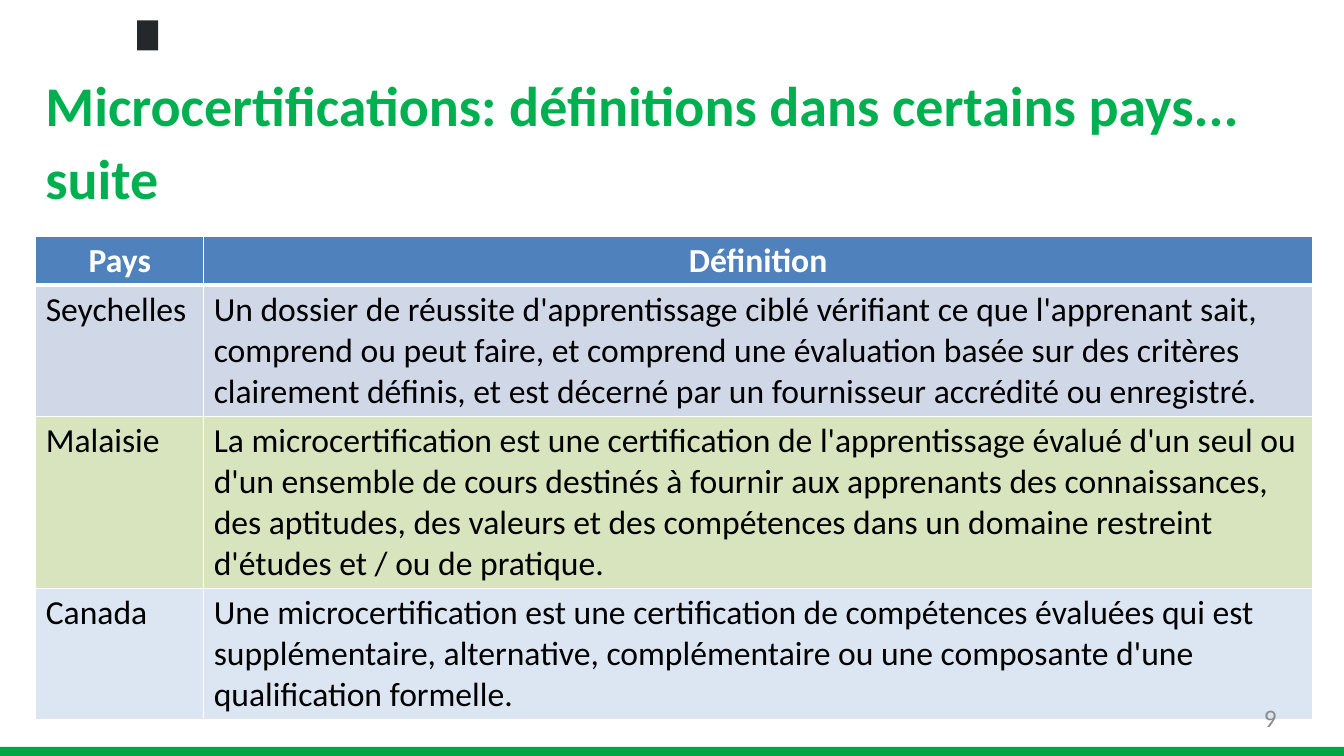
from lxml import etree
from pptx import Presentation
from pptx import util as u
from pptx.dml.color import RGBColor
from pptx.enum import shapes, text
from pptx.oxml.ns import qn

Pt = u.Pt

# Content
TITLE = "Microcertifications: définitions dans certains pays... suite"
PAGE = "9"
# Each row: country, definition, fill, number of text lines
ROWS = [
    ("Pays", "Définition", "header", 1),
    ("Seychelles",
     "Un dossier de réussite d'apprentissage ciblé vérifiant ce que l'apprenant sait, "
     "comprend ou peut faire, et comprend une évaluation basée sur des critères "
     "clairement définis, et est décerné par un fournisseur accrédité ou enregistré.",
     "lavender", 3),
    ("Malaisie",
     "La microcertification est une certification de l'apprentissage évalué d'un seul ou "
     "d'un ensemble de cours destinés à fournir aux apprenants des connaissances, "
     "des aptitudes, des valeurs et des compétences dans un domaine restreint "
     "d'études et / ou de pratique.",
     "olive", 4),
    ("Canada",
     "Une microcertification est une certification de compétences évaluées qui est "
     "supplémentaire, alternative, complémentaire ou une composante d'une "
     "qualification formelle.",
     "sky", 3),
]
COLORS = {
    "white": "FFFFFF", "black": "000000", "mark": "24282A", "band": "00A643",
    "title": "00B050", "page": "8C8C8C", "header": "4F81BD",
    "lavender": "D0D8E8", "olive": "D7E4BD", "sky": "DCE6F2",
}
FONT = "Calibri"
W, H = 960, 540
COLS = (120, 792)
LINE, PAD = 29.3, 2.88  # table line pitch and cell padding


def rgb(name):
    return RGBColor.from_string(COLORS[name])


def add_run(p, words, size, color, bold=False):
    r = p.add_run()
    r.text = words
    r.font.name, r.font.size, r.font.bold = FONT, Pt(size), bold
    r.font.color.rgb = rgb(color)


def add_rect(s, x, y, w, h, color):
    sp = s.shapes.add_shape(shapes.MSO_SHAPE.RECTANGLE, Pt(x), Pt(y), Pt(w), Pt(h))
    sp.shadow.inherit = False
    sp.fill.solid()
    sp.fill.fore_color.rgb = rgb(color)
    sp.line.fill.background()
    return sp


def set_frame(sp, left=0):
    tf = sp.text_frame
    tf.word_wrap = True
    tf.vertical_anchor = text.MSO_ANCHOR.TOP
    tf.margin_left = Pt(left)
    tf.margin_top = tf.margin_right = tf.margin_bottom = 0
    return tf.paragraphs[0]


def set_borders(cell, widths):
    tcPr = cell._tc.get_or_add_tcPr()
    for i, (side, width) in enumerate(widths.items()):
        ln = etree.Element(qn("a:" + side), w=str(Pt(width)))
        fill = etree.SubElement(ln, qn("a:solidFill"))
        etree.SubElement(fill, qn("a:srgbClr"), val=COLORS["white"])
        tcPr.insert(i, ln)


prs = Presentation()
prs.slide_width, prs.slide_height = Pt(W), Pt(H)
s = prs.slides.add_slide(prs.slide_layouts[6])

# Corner mark and bottom band
add_rect(s, 98, 14.5, 15, 21.5, "mark")
add_rect(s, 0, 533.5, W, 6.5, "band")

# Title
p = set_frame(add_rect(s, 26, 47, 928, 105, "white"), left=6.5)
p.alignment = text.PP_ALIGN.LEFT
p.line_spacing = Pt(51.6)
add_run(p, TITLE, 40, "title", True)

# Table of definitions
heights = [n * LINE + 2 * PAD for *_, n in ROWS]
tbl = s.shapes.add_table(len(ROWS), len(COLS), Pt(25.5), Pt(168.75),
                         Pt(sum(COLS)), Pt(sum(heights))).table
for col, width in zip(tbl.columns, COLS):
    col.width = Pt(width)
for i, (country, definition, fill, _) in enumerate(ROWS):
    tbl.rows[i].height = Pt(heights[i])
    head = i == 0
    for j, words in enumerate((country, definition)):
        cell = tbl.cell(i, j)
        cell.margin_top = cell.margin_bottom = Pt(PAD)
        cell.fill.solid()
        cell.fill.fore_color.rgb = rgb(fill)
        set_borders(cell, {"lnL": 1, "lnR": 1, "lnT": 3 if i == 1 else 1,
                           "lnB": 3 if head else 1})
        p = cell.text_frame.paragraphs[0]
        p.alignment = text.PP_ALIGN.CENTER if head else text.PP_ALIGN.LEFT
        add_run(p, words, 24, "white" if head else "black", head)

# Page number
p = set_frame(s.shapes.add_textbox(Pt(691), Pt(502), Pt(221), Pt(27)))
p.alignment = text.PP_ALIGN.RIGHT
add_run(p, PAGE, 18, "page")

prs.save("out.pptx")
